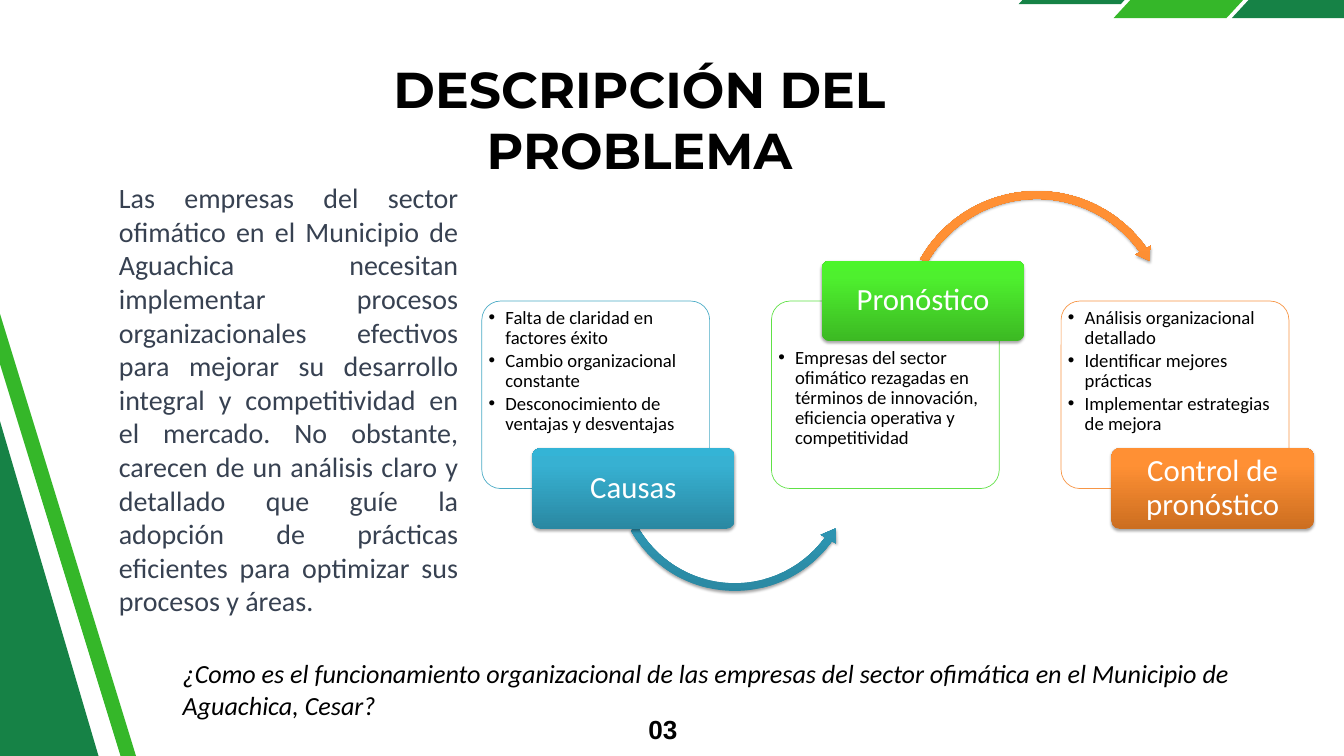
from lxml import etree
from pptx import Presentation
from pptx.dml.color import RGBColor
from pptx.enum.shapes import MSO_SHAPE
from pptx.enum.text import MSO_ANCHOR, MSO_AUTO_SIZE, PP_ALIGN
from pptx.oxml import parse_xml
from pptx.oxml.ns import nsdecls, qn
from pptx.util import Emu, Inches, Pt

ROUNDED = MSO_SHAPE.ROUNDED_RECTANGLE
ARC_UNDER, ARC_OVER = MSO_SHAPE.LEFT_CIRCULAR_ARROW, MSO_SHAPE.CIRCULAR_ARROW
LEFT, CENTER, RIGHT, JUSTIFY = PP_ALIGN.LEFT, PP_ALIGN.CENTER, PP_ALIGN.RIGHT, PP_ALIGN.JUSTIFY
TOP, MIDDLE = MSO_ANCHOR.TOP, MSO_ANCHOR.MIDDLE

THEME = {
    "dark": "168246", "light": "35B729", "ink": "000000", "gray": "374151", "white": "FFFFFF",
    "body_font": "Calibri", "title_font": "Montserrat", "number_font": "Arial",
    "title": 54, "label": 33, "intro": 30, "note": 28, "item": 20,
    # accent: card outline, gradient stops at 0, 80 and 100 %
    "blue": ("4BACC6", ("2A88A2", "37B1D2", "34B4D6")),
    "green": ("60E146", ("3CB923", "4EF02E", "4CF52A")),
    "orange": ("F79646", ("CC6E20", "FF9034", "FF9136")),
}

# Content
TITLE = "DESCRIPCIÓN DEL PROBLEMA"
INTRO = ("Las empresas del sector ofimático en el Municipio de Aguachica necesitan implementar "
         "procesos organizacionales efectivos para mejorar su desarrollo integral y competitividad "
         "en el mercado. No obstante, carecen de un análisis claro y detallado que guíe la adopción "
         "de prácticas eficientes para optimizar sus procesos y áreas.")
QUESTION = ("¿Como es el funcionamiento organizacional de las empresas del sector ofimática "
            "en el Municipio de Aguachica, Cesar?")
PAGE_NUMBER = "03"

# Each step: label, accent, label above the card, items, arrow to the next step
STEPS = [
    ("Causas", "blue", False,
     ["Falta de claridad en factores éxito", "Cambio organizacional constante",
      "Desconocimiento de ventajas y desventajas"],
     (ARC_UNDER, (9.08, 5.16, 3.71), (0.031, 3.795, 21.55, 90.245, 0.036))),
    ("Pronóstico", "green", True,
     ["Empresas del sector ofimático rezagadas en términos de innovación, "
      "eficiencia operativa y competitividad"],
     (ARC_OVER, (13.36, 2.77, 4.14), (0.028, 3.373, 194.872, 125.755, 0.032))),
    ("Control de pronóstico", "orange", False,
     ["Análisis organizacional detallado", "Identificar mejores prácticas",
      "Implementar estrategias de mejora"], None),
]
ARROW_ACCENTS = ("blue", "orange")

# Corner bands: left, top, width, height, slant, colour
CORNER_BANDS = [
    (15.16, -0.86, 2.37, 0.92, 0.85, "dark"),
    (16.57, -1.06, 2.91, 1.33, 1.23, "light"),
    (18.33, -1.06, 2.91, 1.33, 1.23, "dark"),
]
# Side bands: left, top, width, height, rotation, colour
SIDE_BANDS = [
    (-10.09, 6.23, 16.41, 5.01, 253.6, "dark"),
    (-7.08, 8.59, 16.41, 0.22, 252.9, "light"),
]

# Step layout
CARD_LEFT, CARD_TOP, CARD_W, CARD_H, CARD_PITCH = 7.17, 4.48, 3.39, 2.79, 4.31
LABEL_DX, LABEL_W, LABEL_H = 0.75, 3.01, 1.2
LABEL_ABOVE, LABEL_BELOW = 3.88, 6.67
ITEM_INSET, ITEM_DROP, ITEM_INDENT = 0.02, 0.6, 0.25


def rgb(name):
    return RGBColor.from_string(THEME.get(name, name))


def write(paragraph, text, size, color, font="body_font", **style):
    run = paragraph.add_run()
    run.text = text
    run.font.name, run.font.size = THEME[font], Pt(THEME[size])
    run.font.color.rgb = rgb(color)
    for key, value in style.items():
        setattr(run.font, key, value)


def set_frame(frame, insets, anchor=TOP):
    frame.word_wrap, frame.vertical_anchor = True, anchor
    (frame.margin_left, frame.margin_top,
     frame.margin_right, frame.margin_bottom) = map(Inches, insets)


def add_text(slide, box, text, size, color, align=LEFT, inset=(0.1, 0.05), spacing=None, **style):
    frame = slide.shapes.add_textbox(*map(Inches, box)).text_frame
    set_frame(frame, inset * 2)
    frame.auto_size = MSO_AUTO_SIZE.SHAPE_TO_FIT_TEXT
    paragraph = frame.paragraphs[0]
    paragraph.alignment = align
    if spacing:
        paragraph.line_spacing = spacing
    write(paragraph, text, size, color, **style)


def add_band(slide, points, color, rotation=0):
    (x, y), *rest = [(Inches(px), Inches(py)) for px, py in points]
    builder = slide.shapes.build_freeform(x, y, scale=1.0)
    builder.add_line_segments(rest, close=True)
    band = builder.convert_to_shape()
    band.fill.solid()
    band.fill.fore_color.rgb = rgb(color)
    band.line.fill.background()
    band.shadow.inherit = False
    band.rotation = rotation


def add_glossy(slide, kind, box, adjustments, stops):
    """Shape with an upward gradient and a soft shadow below."""
    shape = slide.shapes.add_shape(kind, *map(Inches, box))
    for index, value in enumerate(adjustments):
        shape.adjustments[index] = value
    gradient = "".join(f'<a:gs pos="{pos}"><a:srgbClr val="{color}"/></a:gs>'
                       for pos, color in zip((0, 80000, 100000), stops))
    props = shape.fill._xPr
    props.find(qn("a:prstGeom")).addnext(parse_xml(
        f'<a:gradFill {nsdecls("a")} rotWithShape="1"><a:gsLst>{gradient}</a:gsLst>'
        '<a:lin ang="16200000" scaled="0"/></a:gradFill>'))
    shape.line.fill.background()
    shape.shadow.inherit = False
    props.find(qn("a:effectLst")).append(parse_xml(
        f'<a:outerShdw {nsdecls("a")} blurRad="{Pt(3.1)}" dist="{Pt(1.8)}" dir="5400000" '
        'rotWithShape="0"><a:srgbClr val="000000"><a:alpha val="35000"/></a:srgbClr></a:outerShdw>'))
    return shape


def add_card(slide, left, outline, items, drop):
    card = slide.shapes.add_shape(ROUNDED, *map(Inches, (left, CARD_TOP, CARD_W, CARD_H)))
    card.adjustments[0] = 0.1
    card.fill.solid()
    card.fill.fore_color.rgb = rgb("white")
    color = card.fill._xPr.find(qn("a:solidFill"))[0]
    etree.SubElement(color, qn("a:alpha"), val="90000")
    card.line.color.rgb, card.line.width = rgb(outline), Pt(0.75)
    card.shadow.inherit = False
    frame = card.text_frame
    set_frame(frame, (ITEM_INSET, ITEM_INSET + drop, ITEM_INSET, ITEM_INSET))
    for index, item in enumerate(items):
        paragraph = frame.add_paragraph() if index else frame.paragraphs[0]
        paragraph.level, paragraph.alignment = 1, LEFT
        paragraph.line_spacing, paragraph.space_after = 0.9, Pt(3)
        props = paragraph._p.get_or_add_pPr()
        props.set("marL", str(Inches(ITEM_INDENT)))
        props.set("indent", str(Emu(-Inches(ITEM_INDENT))))
        etree.SubElement(props, qn("a:buFont"), typeface="Arial")
        etree.SubElement(props, qn("a:buChar"), char="•")
        write(paragraph, item, "item", "ink")


def add_label(slide, left, top, text, stops):
    label = add_glossy(slide, ROUNDED, (left, top, LABEL_W, LABEL_H), [0.1], stops)
    set_frame(label.text_frame, (0.07, 0.05, 0.07, 0.05), MIDDLE)
    paragraph = label.text_frame.paragraphs[0]
    paragraph.alignment, paragraph.line_spacing = CENTER, 0.9
    write(paragraph, text, "label", "white")


def main():
    deck = Presentation()
    deck.slide_width, deck.slide_height = Inches(20), Inches(11.25)
    slide = deck.slides.add_slide(deck.slide_layouts[6])

    # Decorative bands
    for x, y, w, h, slant, color in CORNER_BANDS:
        add_band(slide, [(x + slant, y), (x + w, y), (x + w - slant, y + h), (x, y + h)], color)
    for x, y, w, h, rotation, color in SIDE_BANDS:
        add_band(slide, [(x, y), (x + w, y), (x + w, y + h), (x, y + h)], color, rotation)

    # Page number, title, question and introduction
    add_text(slide, (9.52, 10.54, 0.56, 0.5), PAGE_NUMBER, "note", "ink", RIGHT, (0, 0),
             Pt(39.2), font="number_font", bold=True)
    add_text(slide, (3.89, 0.87, 11.25, 1.82), TITLE, "title", "ink", CENTER, (0, 0),
             font="title_font", bold=True)
    add_text(slide, (2.62, 9.74, 16.66, 1.04), QUESTION, "note", "ink", italic=True)
    add_text(slide, (1.67, 2.64, 5.25, 6.66), INTRO, "intro", "gray", JUSTIFY)

    # Steps: card, arrow to the next one, label
    for index, (label, accent, above, items, arrow) in enumerate(STEPS):
        left = CARD_LEFT + index * CARD_PITCH
        outline, stops = THEME[accent]
        add_card(slide, left, outline, items, ITEM_DROP if above else 0)
        if arrow:
            kind, (x, y, size), adjustments = arrow
            arrow_stops = THEME[ARROW_ACCENTS[index]][1]
            add_glossy(slide, kind, (x, y, size, size), adjustments, arrow_stops)
        add_label(slide, left + LABEL_DX, LABEL_ABOVE if above else LABEL_BELOW, label, stops)

    deck.save("out.pptx")


if __name__ == "__main__":
    main()
